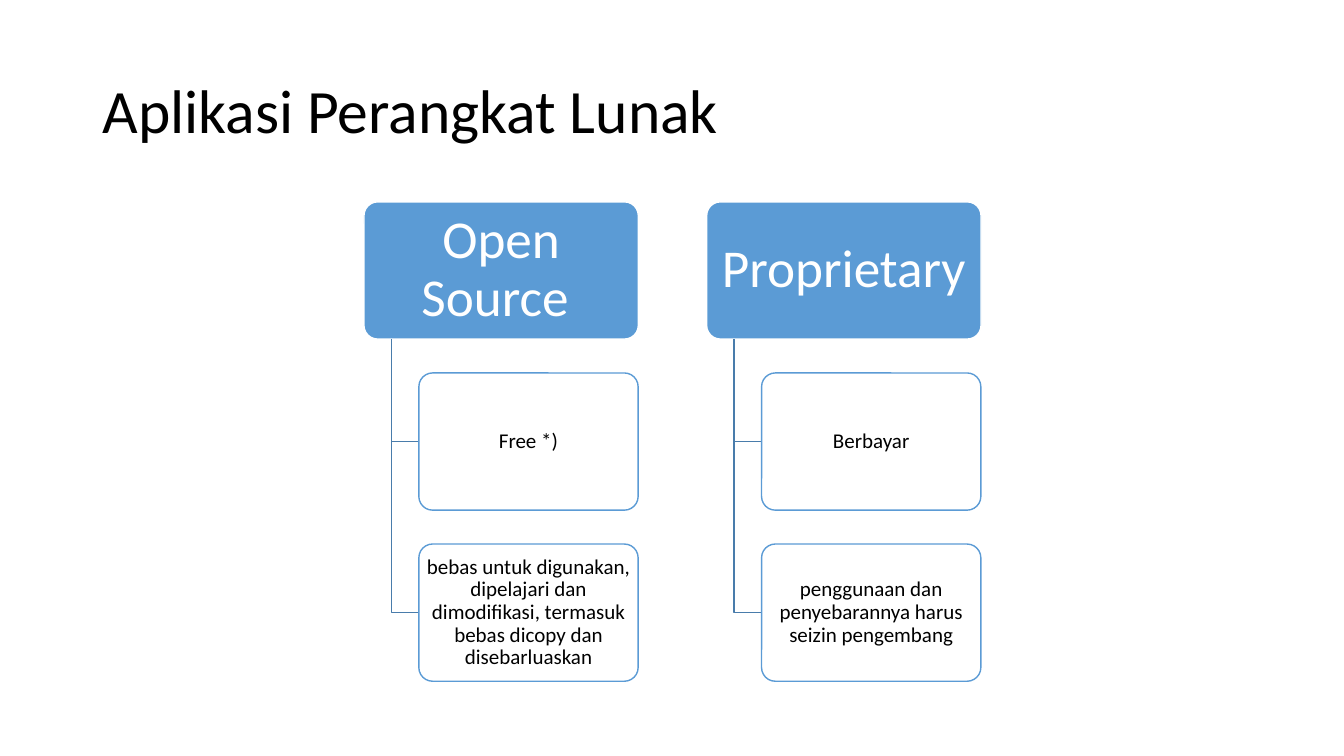
from dataclasses import dataclass

import pptx
import pptx.dml.color
import pptx.enum.shapes
import pptx.enum.text
import pptx.oxml
import pptx.oxml.ns
import pptx.util

Pt = pptx.util.Pt
ALIGN = pptx.enum.text.PP_ALIGN


@dataclass(frozen=True)
class Theme:
    font: str = "Calibri"
    title_size: int = 44
    heading_size: int = 38
    detail_size: int = 15
    dark: str = "000000"
    light: str = "FFFFFF"
    accent: str = "5B9BD5"
    branch: str = "497CAB"


THEME = Theme()

COLUMNS = [
    ("Open Source ", [
        "Free *)",
        "bebas untuk digunakan, dipelajari dan dimodifikasi, "
        "termasuk bebas dicopy dan disebarluaskan",
    ]),
    ("Proprietary", [
        "Berbayar",
        "penggunaan dan penyebarannya harus seizin pengembang",
    ]),
]

TREE_LEFT, TREE_TOP = 260, 144.2
COLUMN_STEP, ROW_STEP = 244.8, 122.2
HEADING_WIDTH, BOX_HEIGHT = 196, 98
DETAIL_WIDTH = 156.6
TRUNK_INDENT = 19.6


def color(code):
    return pptx.dml.color.RGBColor.from_string(code)


def write(shape, text, size, ink, align=ALIGN.CENTER, inset=(7.2, 3.6)):
    frame = shape.text_frame
    frame.word_wrap = True
    frame.auto_size = pptx.enum.text.MSO_AUTO_SIZE.NONE
    frame.vertical_anchor = pptx.enum.text.MSO_ANCHOR.MIDDLE
    frame.margin_left = frame.margin_right = Pt(inset[0])
    frame.margin_top = frame.margin_bottom = Pt(inset[1])
    para = frame.paragraphs[0]
    para.alignment = align
    para.line_spacing = 0.9
    span = para.add_run()
    span.text = text
    span.font.name = THEME.font
    span.font.size = Pt(size)
    span.font.color.rgb = color(ink)


def add_box(page, left, top, width, fill, line):
    box = page.shapes.add_shape(
        pptx.enum.shapes.MSO_SHAPE.ROUNDED_RECTANGLE,
        Pt(left), Pt(top), Pt(width), Pt(BOX_HEIGHT))
    box.adjustments[0] = 0.1
    box.shadow.inherit = False
    box.fill.solid()
    box.fill.fore_color.rgb = color(fill)
    box.line.color.rgb = color(line)
    box.line.width = Pt(1)
    return box


def set_opacity(box, percent):
    fill_color = box.fill._xPr.find(".//" + pptx.oxml.ns.qn("a:srgbClr"))
    alpha = pptx.oxml.parse_xml(
        f'<a:alpha {pptx.oxml.ns.nsdecls("a")} val="{percent * 1000}"/>')
    fill_color.append(alpha)


def add_branch(page, left, top, right, bottom):
    """Draw an open elbow: down from the heading, then across to a detail."""
    builder = page.shapes.build_freeform(Pt(left), Pt(top))
    builder.add_line_segments(
        [(Pt(left), Pt(bottom)), (Pt(right), Pt(bottom))], close=False)
    branch = builder.convert_to_shape()
    branch.shadow.inherit = False
    branch.fill.background()
    branch.line.color.rgb = color(THEME.branch)
    branch.line.width = Pt(1)


def add_column(page, left, heading, details):
    box = add_box(page, left, TREE_TOP, HEADING_WIDTH, THEME.accent, THEME.light)
    write(box, heading, THEME.heading_size, THEME.light, inset=(5.7, 3.8))
    trunk = left + TRUNK_INDENT
    detail_left = left + 2 * TRUNK_INDENT
    for row, detail in enumerate(details, start=1):
        top = TREE_TOP + row * ROW_STEP
        add_branch(page, trunk, TREE_TOP + BOX_HEIGHT,
                   detail_left, top + BOX_HEIGHT / 2)
        box = add_box(page, detail_left, top, DETAIL_WIDTH,
                      THEME.light, THEME.accent)
        set_opacity(box, 90)
        write(box, detail, THEME.detail_size, THEME.dark, inset=(2.25, 1.5))


def add_title(page, text):
    title = page.shapes.title
    title.left, title.top = Pt(66), Pt(28.8)
    title.width, title.height = Pt(828), Pt(104.4)
    write(title, text, THEME.title_size, THEME.dark, align=ALIGN.LEFT)


def main():
    deck = pptx.Presentation()
    deck.slide_width, deck.slide_height = Pt(960), Pt(540)
    page = deck.slides.add_slide(deck.slide_layouts.get_by_name("Title Only"))
    add_title(page, "Aplikasi Perangkat Lunak")
    for index, (heading, details) in enumerate(COLUMNS):
        add_column(page, TREE_LEFT + index * COLUMN_STEP, heading, details)
    deck.save("out.pptx")


if __name__ == "__main__":
    main()
